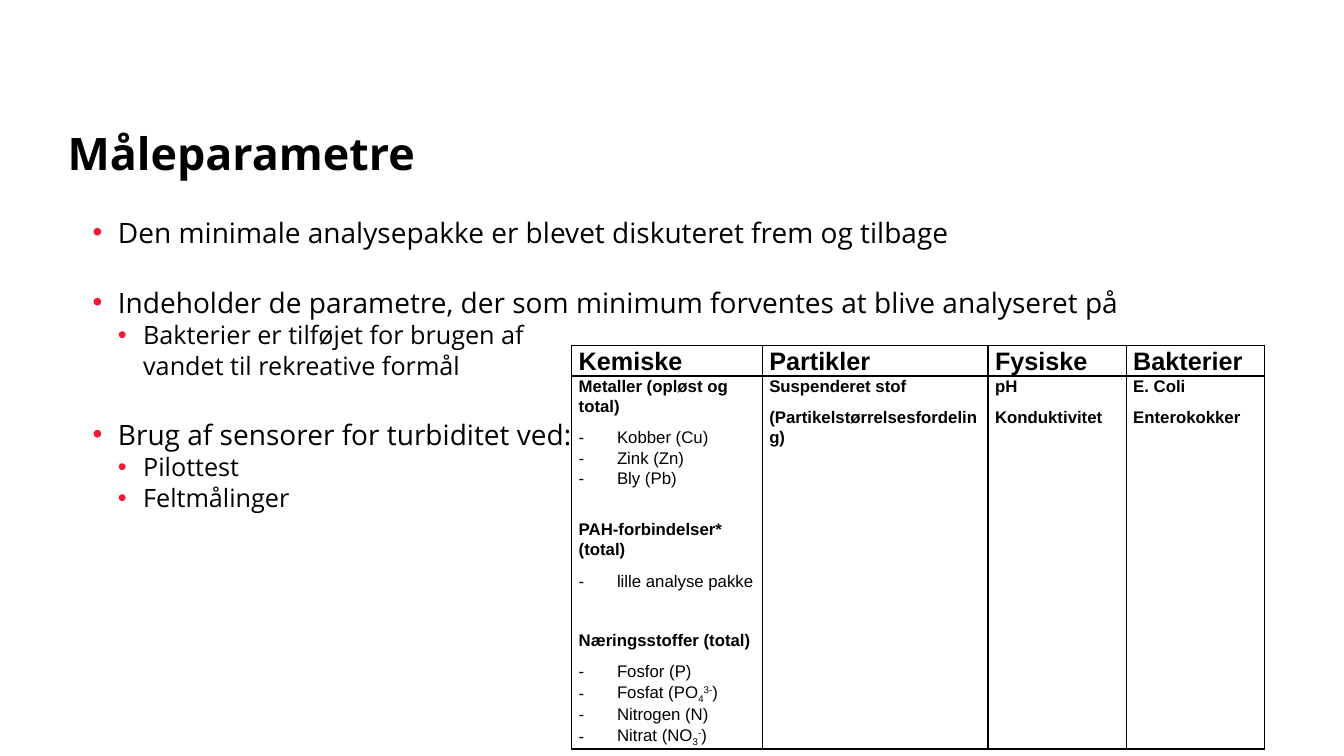
from lxml.etree import SubElement
from pptx import Presentation
from pptx.dml.color import RGBColor
from pptx.enum.text import MSO_ANCHOR, MSO_AUTO_SIZE, PP_ALIGN
from pptx.oxml.ns import qn
from pptx.util import Inches, Pt

COLORS = {"text": "000000", "bullet": "F11935", "border": "000000"}
HEADING, ITEM = "heading", "item"
SUB, SUPER = -25, 30

# Text, level, space before in points, bulleted
BULLETS = [
    ("Den minimale analysepakke er blevet diskuteret frem og tilbage", 1, 0, True),
    ("Indeholder de parametre, der som minimum forventes at blive analyseret på", 1, 31, True),
    ("Bakterier er tilføjet for brugen af", 2, 4.7, True),
    ("vandet til rekreative formål", 2, 4.7, False),
    ("Brug af sensorer for turbiditet ved:", 1, 31, True),
    ("Pilottest", 2, 4.7, True),
    ("Feltmålinger", 2, 4.7, True),
]

HEADERS = ["Kemiske", "Partikler", "Fysiske", "Bakterier"]
COLUMN_WIDTHS = [1.89, 2.24, 1.37, 1.37]
ROW_HEIGHTS = [0.3, 3.7]

# Kind, space before in points, runs of text and baseline shift
PARAMETERS = [
    [
        (HEADING, 0, [("Metaller (opløst og total)", 0)]),
        (ITEM, 0, [("Kobber (Cu)", 0)]),
        (ITEM, 0, [("Zink (Zn)", 0)]),
        (ITEM, 0, [("Bly (Pb)", 0)]),
        (HEADING, 22.5, [("PAH-forbindelser* (total)", 0)]),
        (ITEM, 0, [("lille analyse pakke", 0)]),
        (HEADING, 28, [("Næringsstoffer (total)", 0)]),
        (ITEM, 0, [("Fosfor (P)", 0)]),
        (ITEM, 0, [("Fosfat (PO", 0), ("4", SUB), ("3-", SUPER), (")", 0)]),
        (ITEM, 0, [("Nitrogen (N)", 0)]),
        (ITEM, 0, [("Nitrat (NO", 0), ("3", SUB), ("-", SUPER), (")", 0)]),
    ],
    [(HEADING, 0, [("Suspenderet stof", 0)]),
     (HEADING, 0, [("(Partikelstørrelsesfordeling)", 0)])],
    [(HEADING, 0, [("pH", 0)]), (HEADING, 0, [("Konduktivitet", 0)])],
    [(HEADING, 0, [("E. Coli", 0)]), (HEADING, 0, [("Enterokokker", 0)])],
]


class SlideBuilder:
    body_font = "Open Sans"
    table_font = "Arial"

    def __init__(self, presentation):
        self.slide = presentation.slides.add_slide(presentation.slide_layouts[5])

    def style(self, paragraph, font_name, size, bold=False):
        font = paragraph.font
        font.name, font.size, font.bold = font_name, Pt(size), bold
        font.color.rgb = RGBColor.from_string(COLORS["text"])

    def indent(self, paragraph, margin, first=0, bullet=None, color=COLORS["text"]):
        properties = paragraph._p.get_or_add_pPr()
        properties.set("marL", str(Inches(margin)))
        properties.set("indent", str(Inches(first)))
        if bullet:
            bullet_color = SubElement(properties, qn("a:buClr"))
            SubElement(bullet_color, qn("a:srgbClr"), val=color)
            SubElement(properties, qn("a:buFont"), typeface="Arial")
            SubElement(properties, qn("a:buChar"), char=bullet)

    def prepare(self, frame):
        frame.word_wrap = True
        frame.auto_size = MSO_AUTO_SIZE.NONE
        frame.margin_left = frame.margin_right = 0
        frame.margin_top = frame.margin_bottom = 0

    def paragraphs(self, frame, count):
        for _ in range(count - 1):
            frame.add_paragraph()
        return frame.paragraphs

    def title(self, text, left, top, width, height):
        title = self.slide.shapes.title
        title.left, title.top = Inches(left), Inches(top)
        title.width, title.height = Inches(width), Inches(height)
        frame = title.text_frame
        self.prepare(frame)
        frame.vertical_anchor = MSO_ANCHOR.MIDDLE
        frame.text = text
        paragraph = frame.paragraphs[0]
        paragraph.alignment = PP_ALIGN.LEFT
        paragraph.line_spacing = 0.9
        self.style(paragraph, self.body_font, 32, True)

    def bullets(self, entries, left, top, width, height):
        box = self.slide.shapes.add_textbox(
            Inches(left), Inches(top), Inches(width), Inches(height))
        frame = box.text_frame
        self.prepare(frame)
        paragraphs = self.paragraphs(frame, len(entries))
        for paragraph, (text, level, before, bulleted) in zip(paragraphs, entries):
            paragraph.add_run().text = text
            paragraph.level = level - 1
            paragraph.line_spacing = 0.8
            paragraph.space_before = Pt(before)
            margin = 0.25 + 0.25 * level
            if bulleted:
                self.indent(paragraph, margin, -0.25, "•", COLORS["bullet"])
            else:
                self.indent(paragraph, margin)
            self.style(paragraph, self.body_font, 22 - 2 * level)

    def cell(self, cell, entries, size):
        cell.fill.background()
        cell.margin_left = cell.margin_right = Inches(0.07)
        cell.margin_top = cell.margin_bottom = 0
        paragraphs = self.paragraphs(cell.text_frame, len(entries))
        for paragraph, (kind, before, runs) in zip(paragraphs, entries):
            paragraph.line_spacing = 1.07
            paragraph.space_before = Pt(before)
            paragraph.space_after = Pt(8 if kind == HEADING else 0)
            if kind == ITEM:
                self.indent(paragraph, 0.38, -0.38, "-")
            self.style(paragraph, self.table_font, size, kind == HEADING)
            for text, shift in runs:
                run = paragraph.add_run()
                run.text = text
                if shift:
                    run._r.get_or_add_rPr().set("baseline", str(shift * 1000))
        self.borders(cell)

    def borders(self, cell):
        properties = cell._tc.get_or_add_tcPr()
        for position, side in enumerate(("a:lnL", "a:lnR", "a:lnT", "a:lnB")):
            line = properties.makeelement(qn(side), {"w": str(Pt(1))})
            fill = SubElement(line, qn("a:solidFill"))
            SubElement(fill, qn("a:srgbClr"), val=COLORS["border"])
            properties.insert(position, line)

    def table(self, headers, columns, left, top):
        table = self.slide.shapes.add_table(
            2, len(headers), Inches(left), Inches(top),
            Inches(sum(COLUMN_WIDTHS)), Inches(sum(ROW_HEIGHTS))).table
        table.first_row = table.horz_banding = False
        for row, height in zip(table.rows, ROW_HEIGHTS):
            row.height = Inches(height)
        for index, (header, entries) in enumerate(zip(headers, columns)):
            table.columns[index].width = Inches(COLUMN_WIDTHS[index])
            self.cell(table.cell(0, index), [(HEADING, 0, [(header, 0)])], 18)
            self.cell(table.cell(1, index), entries, 12)


def main():
    presentation = Presentation()
    presentation.slide_width, presentation.slide_height = Inches(13.33), Inches(7.5)
    builder = SlideBuilder(presentation)

    # Title and bullet list
    builder.title("Måleparametre", 0.67, 1.19, 11.87, 0.71)
    builder.bullets(BULLETS, 0.67, 2.2, 11.87, 4.61)

    # Table of measured parameters
    builder.table(HEADERS, PARAMETERS, 5.67, 3.43)

    presentation.save("out.pptx")


if __name__ == "__main__":
    main()
